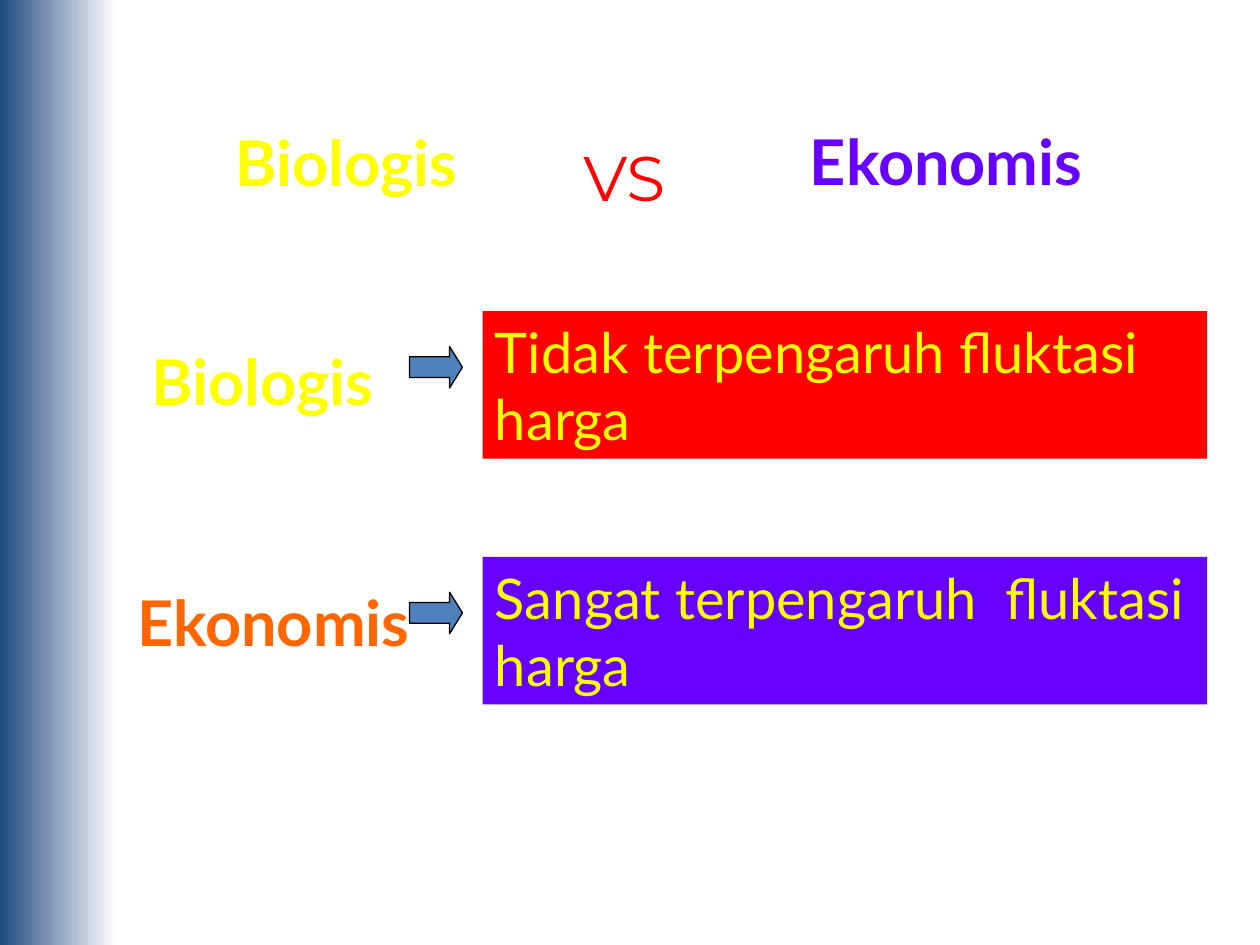
import pptx
import pptx.util
import pptx.dml.color
import pptx.enum.shapes
import pptx.enum.text

Inches = pptx.util.Inches
Kind = pptx.enum.shapes.MSO_SHAPE
Align = pptx.enum.text.PP_ALIGN

HUES = {
    "navy": "1F497D", "white": "FFFFFF", "black": "000000", "blue": "4F81BD",
    "yellow": "FFFF00", "red": "FF0000", "violet": "6600FF", "orange": "FF6600",
}
WORDS = [
    ("Biologis", "Lato", "yellow", True, (1.42, 0.93, 2.66, 0.89)),
    ("VS", "Montserrat", "red", False, (4.58, 1.05, 0.75, 0.46)),
    ("Ekonomis", "Lato", "violet", True, (5.76, 0.92, 3.5, 0.72)),
    ("Biologis", "Lato", "yellow", True, (1.17, 2.67, 1.83, 0.55)),
    ("Ekonomis", "Lato", "orange", True, (1.07, 4.58, 2.2, 0.58)),
]
ROWS = [
    ("Tidak terpengaruh fluktasi harga", "red"),
    ("Sangat terpengaruh  fluktasi harga", "violet"),
]
TOP, STEP, DROP = 2.47, 1.95, 0.28


def hue(name):
    return pptx.dml.color.RGBColor.from_string(HUES[name])


def write(shape, text, face, size, color, bold, align, wrap):
    frame = shape.text_frame
    frame.word_wrap = wrap
    frame.vertical_anchor = pptx.enum.text.MSO_ANCHOR.TOP
    frame.margin_left = frame.margin_right = Inches(0.1 if wrap else 0)
    para = frame.paragraphs[0]
    para.text = text
    para.alignment = align
    font = para.font
    font.name, font.size, font.bold = face, pptx.util.Pt(size), bold
    font.color.rgb = hue(color)


def draw(slide, kind, box, fill=None, line=None):
    shape = slide.shapes.add_shape(kind, *map(Inches, box))
    shape.shadow.inherit = False
    if fill:
        shape.fill.solid()
        shape.fill.fore_color.rgb = hue(fill)
    if line:
        shape.line.color.rgb = hue(line)
        shape.line.width = pptx.util.Pt(0.75)
    else:
        shape.line.fill.background()
    return shape


def main():
    deck = pptx.Presentation()
    deck.slide_width, deck.slide_height = Inches(10), Inches(7.5)
    slide = deck.slides.add_slide(deck.slide_layouts[6])

    band = draw(slide, Kind.RECTANGLE, (0, 0, 0.92, 7.5))
    band.fill.gradient()
    band.fill.gradient_angle = 0
    for stop, name in zip(band.fill.gradient_stops, ("navy", "white")):
        stop.color.rgb = hue(name)

    for text, face, color, bold, box in WORDS:
        label = slide.shapes.add_textbox(*map(Inches, box))
        write(label, text, face, 36, color, bold, Align.CENTER, False)

    for i, (text, fill) in enumerate(ROWS):
        y = TOP + i * STEP
        arrow = draw(slide, Kind.RIGHT_ARROW, (3.25, y + DROP, 0.42, 0.33), "blue", "black")
        arrow.adjustments[0], arrow.adjustments[1] = 0.5, 0.31
        panel = draw(slide, Kind.RECTANGLE, (3.83, y, 5.75, 1.17), fill)
        write(panel, text, "Lato", 32, "yellow", False, Align.LEFT, True)

    deck.save("out.pptx")


if __name__ == "__main__":
    main()
